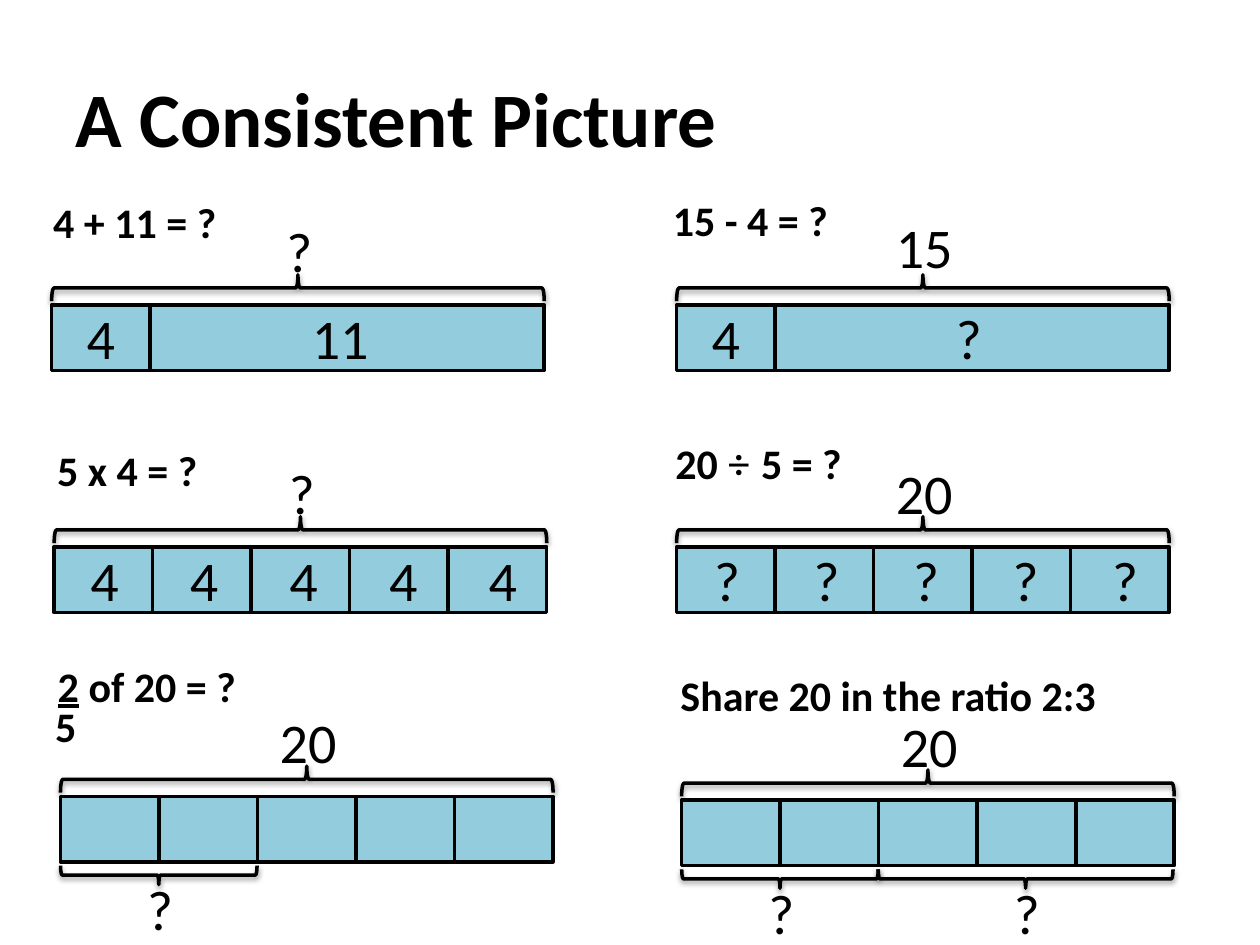
from pptx import Presentation
from pptx import util as u
from pptx.dml.color import RGBColor
from pptx.enum import shapes, text
from pptx.oxml import parse_xml
from pptx.oxml.ns import nsdecls

BLACK = RGBColor(0x00, 0x00, 0x00)
BLUE = RGBColor(0x93, 0xCD, 0xDD)
UNIT = 0.78
BAR_H = 0.52
BAR_W = 3.91
BRACE_H = 0.21
SHARE_H = 0.15
SHADOW = (
    f'<a:effectLst {nsdecls("a")}>'
    '<a:outerShdw blurRad="39370" dist="20320" dir="5400000" rotWithShape="0">'
    '<a:srgbClr val="000000"><a:alpha val="38000"/></a:srgbClr>'
    '</a:outerShdw></a:effectLst>'
)


def add_text(s, box, runs, size, bold=False, align=text.PP_ALIGN.CENTER,
             anchor=text.MSO_ANCHOR.MIDDLE):
    tf = s.shapes.add_textbox(*map(u.Inches, box)).text_frame
    tf.word_wrap = True
    tf.vertical_anchor = anchor
    p = tf.paragraphs[0]
    p.alignment = align
    p.font.size = u.Pt(size)
    p.font.bold = bold
    p.font.name = "Calibri"
    p.font.color.rgb = BLACK
    for words, style in runs:
        r = p.add_run()
        r.text = words
        r.font.name = style.get("name", "Calibri")
        r.font.underline = style.get("underline")


def add_heading(s, box, *runs, align=text.PP_ALIGN.CENTER):
    add_text(s, box, runs, 24, bold=True, align=align)


def add_number(s, center, top, value):
    add_text(s, (center - 0.46, top, 0.92, 0.54), [(value, {})], 32,
             anchor=text.MSO_ANCHOR.TOP)


def add_outlined(s, kind, box):
    sp = s.shapes.add_shape(kind, *map(u.Inches, box))
    sp.shadow.inherit = False
    sp.line.color.rgb = BLACK
    sp.line.width = u.Pt(2)
    return sp


def add_brace(s, left, top, width, height, rotation):
    box = (left + (width - height) / 2, top - (width - height) / 2, height, width)
    sp = add_outlined(s, shapes.MSO_SHAPE.RIGHT_BRACE, box)
    sp.rotation = rotation
    sp.fill.background()
    props = sp.fill._xPr
    props.replace(props.effectLst, parse_xml(SHADOW)) if hasattr(props, "effectLst") \
        else props.append(parse_xml(SHADOW))


def add_bar(s, left, top, widths, total, numbers=(), shares=(), total_rise=0.75):
    x = left
    for width in widths:
        sp = add_outlined(s, shapes.MSO_SHAPE.RECTANGLE, (x, top, width, BAR_H))
        sp.fill.solid()
        sp.fill.fore_color.rgb = BLUE
        x += width
    add_brace(s, left, top - 0.24, BAR_W, BRACE_H, 270)
    add_number(s, left + BAR_W / 2 + 0.01, top - total_rise, total)
    for value, offset in numbers:
        add_number(s, left + offset, top - 0.06, value)
    for first, count in shares:
        x, width = left + first * UNIT, count * UNIT
        add_brace(s, x, top + 0.55, width, SHARE_H, 90)
        add_number(s, x + width / 2 + 0.01, top + 0.57, "?")


def main():
    prs = Presentation()
    prs.slide_width, prs.slide_height = u.Inches(10), u.Inches(7.5)
    s = prs.slides.add_slide(prs.slide_layouts[6])
    left = text.PP_ALIGN.LEFT
    two_parts = [UNIT, BAR_W - UNIT]
    five_parts = [BAR_W / 5] * 5
    part_centers = [0.4 + 0.79 * i for i in range(5)]

    add_text(s, (0.5, 0.3, 6.38, 1.25), [("A Consistent Picture", {})], 44,
             bold=True, align=left)

    add_heading(s, (-0.07, 1.31, 2.28, 0.9), ("4 + 11 = ?", {}))
    add_bar(s, 0.41, 2.42, two_parts, "?", [("4", 0.39), ("11", 2.29)])

    add_heading(s, (4.87, 1.34, 2.17, 0.8), ("15 - 4 = ?", {}))
    add_bar(s, 5.37, 2.42, two_parts, "15", [("4", 0.39), ("?", 2.32)],
            total_rise=0.78)

    add_heading(s, (0, 3.15, 2.02, 1.16), ("5 x 4 = ?", {}))
    add_bar(s, 0.43, 4.34, five_parts, "?", [("4", c) for c in part_centers])

    add_heading(s, (4.78, 3.26, 2.48, 0.83), ("20 ", {}),
                ("÷ ", {"name": "Times New Roman"}), ("5 = ?", {}))
    add_bar(s, 5.37, 4.34, five_parts, "20", [("?", c) for c in part_centers])

    add_heading(s, (0.36, 4.86, 2.51, 1.16), ("2", {"underline": True}),
                (" of 20 = ?", {}), align=left)
    add_heading(s, (0.34, 5.18, 0.67, 1.16), ("5", {}), align=left)
    add_bar(s, 0.48, 6.32, five_parts, "20", shares=[(0, 2)])

    add_heading(s, (5.03, 4.93, 4.04, 1.16), ("Share 20 in the ratio 2:3", {}))
    add_bar(s, 5.41, 6.35, five_parts, "20", shares=[(0, 2), (2, 3)])

    prs.save("out.pptx")


if __name__ == "__main__":
    main()
